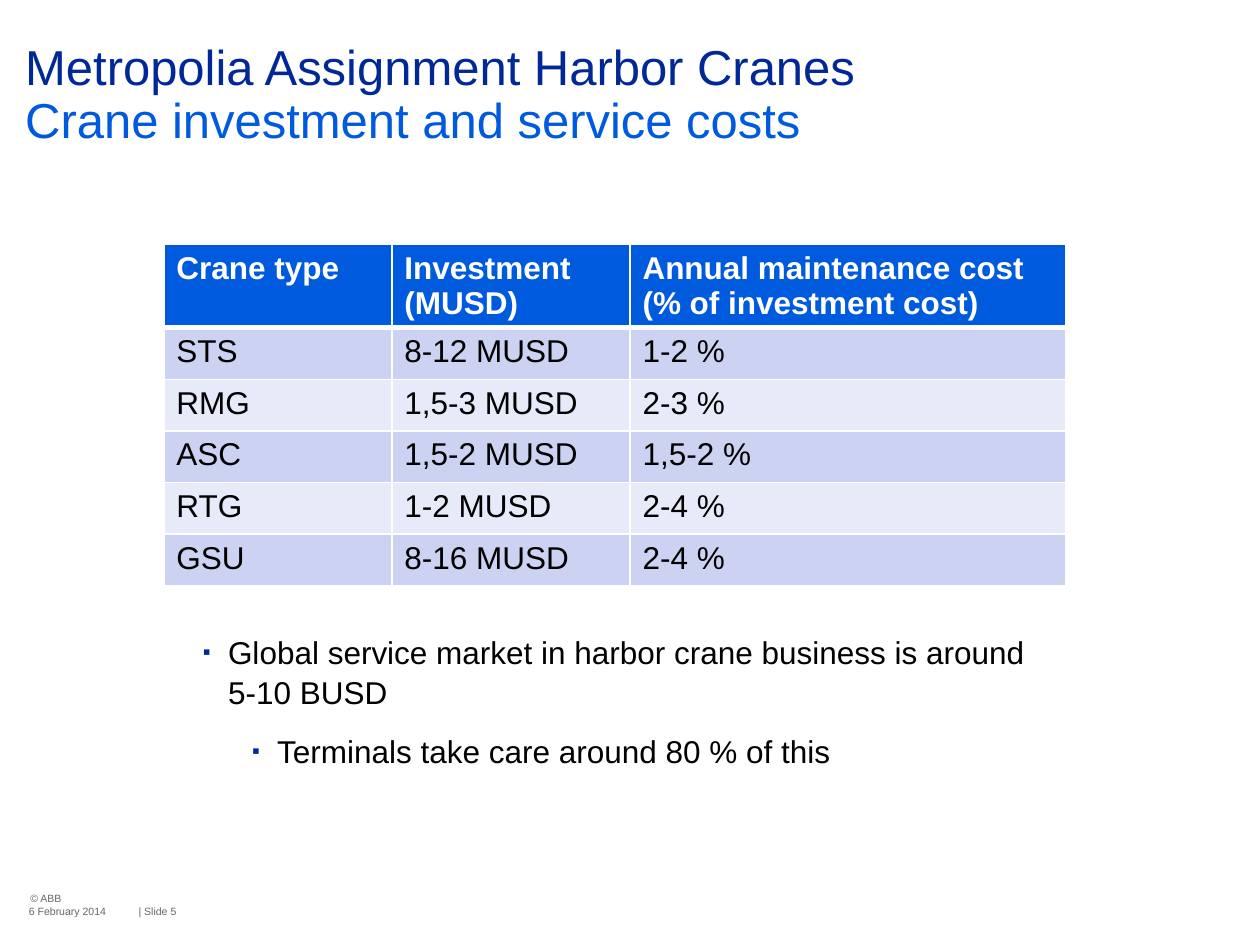
import pptx
import pptx.util
import pptx.dml.color
import pptx.enum.text
import pptx.oxml
import pptx.oxml.ns
from dataclasses import dataclass

Inches, Pt = pptx.util.Inches, pptx.util.Pt
RGB = pptx.dml.color.RGBColor.from_string
NS = pptx.oxml.ns.nsdecls("a")


@dataclass(frozen=True)
class Theme:
    font: str = "Arial"
    navy: str = "002897"
    blue: str = "005ADE"
    band_dark: str = "CCD2F2"
    band_light: str = "E7EAF9"
    white: str = "FFFFFF"
    black: str = "000000"
    gray: str = "666666"
    title: int = 28
    text: int = 18
    footer: int = 6


theme = Theme()


def write(p, text, size=theme.text, color=theme.black, bold=False):
    r = p.add_run()
    r.text = text
    r.font.name = theme.font
    r.font.size = Pt(size)
    r.font.bold = bold
    r.font.color.rgb = RGB(color)


def set_frame(sp, box, insets=(0, 0, 0, 0), wrap=True):
    sp.left, sp.top, sp.width, sp.height = (Inches(v) for v in box)
    tf = sp.text_frame
    tf.margin_left, tf.margin_top, tf.margin_right, tf.margin_bottom = (
        Inches(v) for v in insets)
    tf.word_wrap = wrap
    tf.auto_size = pptx.enum.text.MSO_AUTO_SIZE.NONE
    tf.vertical_anchor = pptx.enum.text.MSO_ANCHOR.TOP
    return tf


prs = pptx.Presentation()
prs.slide_width, prs.slide_height = Inches(10), Inches(7.5)
s = prs.slides.add_slide(prs.slide_layouts[1])

# Title in two colours
tf = set_frame(s.shapes.title, (0, 0, 10, 1.74), (0.2, 0.34, 0.24, 0))
p = tf.paragraphs[0]
p.alignment = pptx.enum.text.PP_ALIGN.LEFT
p.line_spacing = 0.9
write(p, "Metropolia Assignment Harbor Cranes", theme.title, theme.navy)
p.add_line_break()
write(p, "Crane investment and service costs", theme.title, theme.blue)

# Bulleted list
tf = set_frame(s.placeholders[1], (1.61, 5.01, 6.77, 1.77))
bullets = [
    ("Global service market in harbor crane business is around 5-10 BUSD", 0.2, 0, 0),
    ("Terminals take care around 80 % of this", 0.59, 11, 4),
]
for level, (text, indent, before, after) in enumerate(bullets):
    p = tf.add_paragraph() if level else tf.paragraphs[0]
    p.level = level
    pPr = p._p.get_or_add_pPr()
    pPr.set("marL", str(Inches(indent)))
    pPr.set("indent", str(Inches(-0.2)))
    for xml in (f'<a:buClr {NS}><a:srgbClr val="{theme.navy}"/></a:buClr>',
                f'<a:buSzPct {NS} val="70000"/>',
                f'<a:buFont {NS} typeface="{theme.font}"/>',
                f'<a:buChar {NS} char="▪"/>'):
        pPr.append(pptx.oxml.parse_xml(xml))
    p.line_spacing = 1.05
    p.space_before, p.space_after = Pt(before), Pt(after)
    write(p, text)

# Cost table
rows = [
    ("Crane type", "Investment (MUSD)", "Annual maintenance cost (% of investment cost)"),
    ("STS", "8-12 MUSD", "1-2 %"),
    ("RMG", "1,5-3 MUSD", "2-3 %"),
    ("ASC", "1,5-2 MUSD", "1,5-2 %"),
    ("RTG", "1-2 MUSD", "2-4 %"),
    ("GSU", "8-16 MUSD", "2-4 %"),
]
widths = (1.81, 1.89, 3.46)
table = s.shapes.add_table(len(rows), len(widths), Inches(1.3), Inches(1.94),
                           Inches(sum(widths)), Inches(2.7)).table
for column, width in zip(table.columns, widths):
    column.width = Inches(width)
for i, values in enumerate(rows):
    header = i == 0
    table.rows[i].height = Inches(0.65 if header else 0.41)
    band = theme.band_dark if i % 2 else theme.band_light
    for j, value in enumerate(values):
        cell = table.cell(i, j)
        # Borders: the rule under the header is thicker
        for side in "LRTB":
            thick = (side == "B" and header) or (side == "T" and i == 1)
            cell._tc.get_or_add_tcPr().append(pptx.oxml.parse_xml(
                f'<a:ln{side} {NS} w="{Pt(3 if thick else 1)}"><a:solidFill>'
                f'<a:srgbClr val="{theme.white}"/></a:solidFill></a:ln{side}>'))
        cell.fill.solid()
        cell.fill.fore_color.rgb = RGB(theme.blue if header else band)
        write(cell.text_frame.paragraphs[0], value, bold=header,
              color=theme.white if header else theme.black)

# Footer
footers = [
    ("© ABB", (0.24, 7.08, 1.22, 0.1), False),
    ("6 February 2014", (0.23, 7.18, 0.87, 0.11), False),
    ("| Slide 5", (1.1, 7.18, 0.51, 0.11), True),
]
for text, box, wrap in footers:
    sp = s.shapes.add_textbox(0, 0, 0, 0)
    tf = set_frame(sp, box, wrap=wrap)
    write(tf.paragraphs[0], text, theme.footer, theme.gray)

prs.save("out.pptx")
